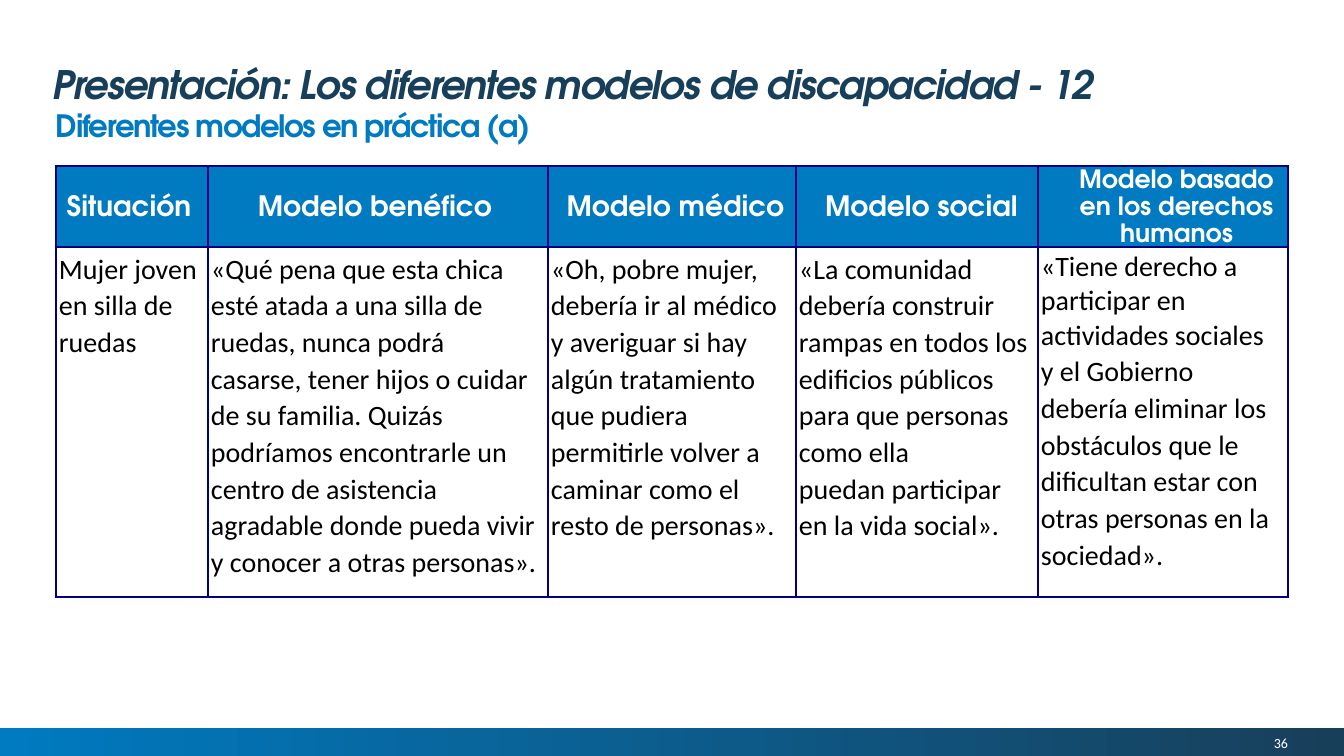
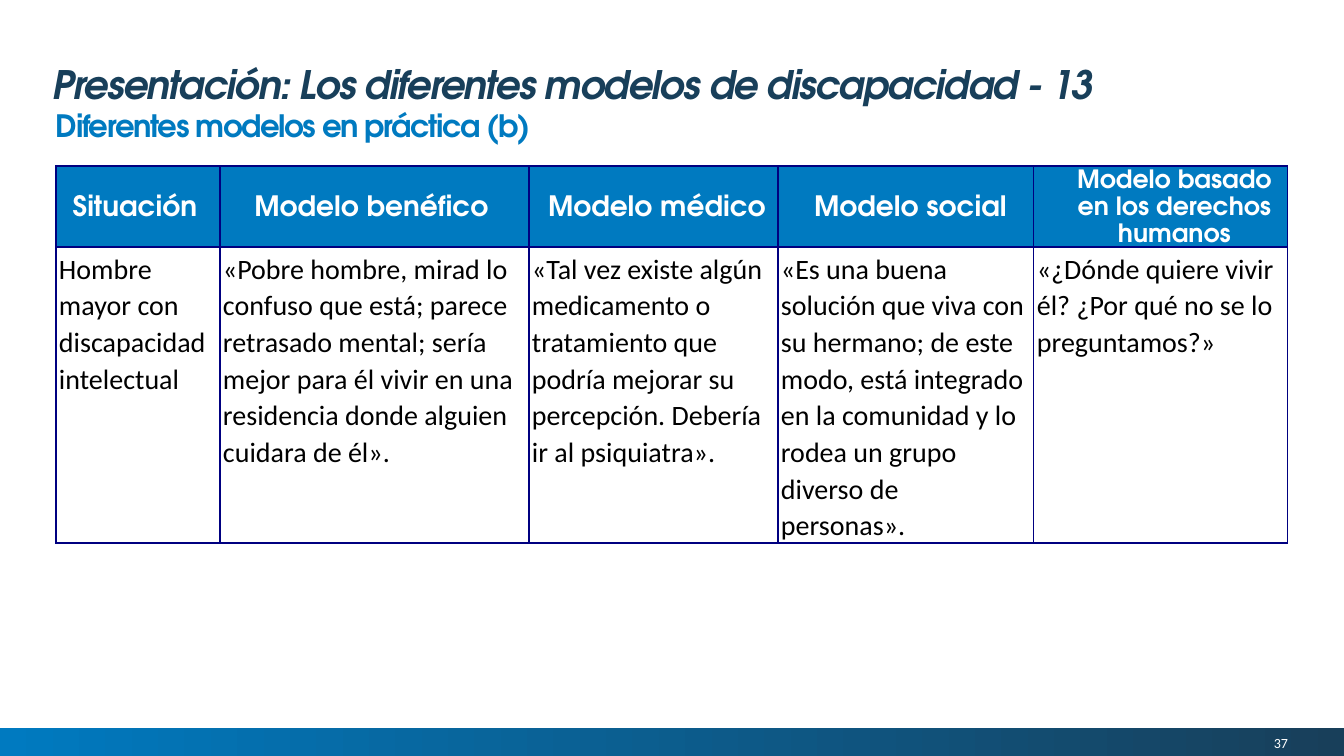
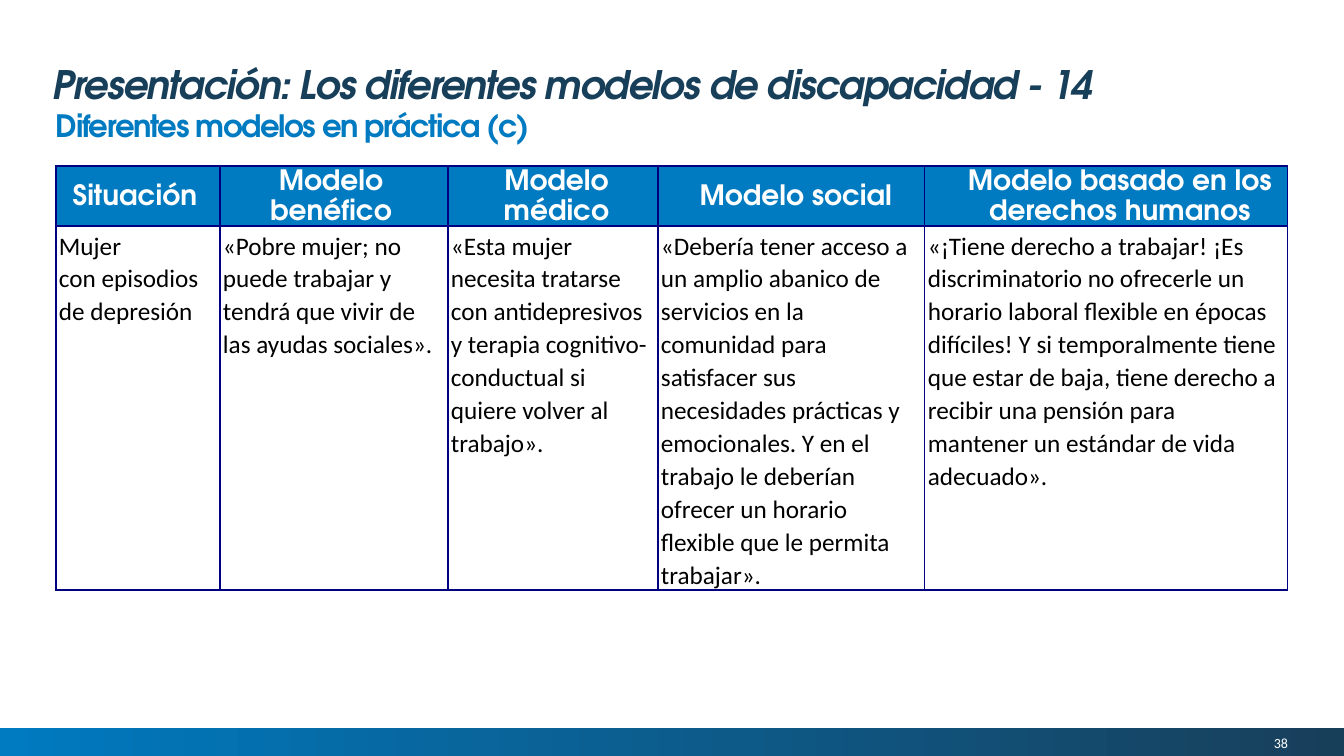
from lxml import etree
from pptx import Presentation
from pptx.dml.color import RGBColor
from pptx.enum.shapes import MSO_SHAPE
from pptx.enum.text import MSO_ANCHOR, PP_ALIGN
from pptx.oxml.ns import qn
from pptx.util import Pt

RECTANGLE = MSO_SHAPE.RECTANGLE
TOP, MIDDLE, BOTTOM = MSO_ANCHOR.TOP, MSO_ANCHOR.MIDDLE, MSO_ANCHOR.BOTTOM
LEFT, CENTER, RIGHT = PP_ALIGN.LEFT, PP_ALIGN.CENTER, PP_ALIGN.RIGHT

WIDTH, HEIGHT = 1344, 756
PX = 12192000 / WIDTH
BLUE, NAVY, BORDER = "007AC0", "183F5A", "000080"
WHITE, BLACK = "FFFFFF", "000000"
HEADING_FONT, BODY_FONT = "TeX Gyre Adventor", "Calibri"
TABLE_LEFT, TABLE_TOP, TABLE_WIDTH = 56, 166, 1232
LINE_FACTOR = 1.07

MODELS = [
    "Situación",
    "Modelo benéfico",
    "Modelo médico",
    "Modelo social",
    "Modelo basado en los derechos humanos",
]
HEADER_INDENTS = [0, 0, 13, 15, 33]

CASES = [
    {
        "columns": [152, 340, 248, 242, 250],
        "rows": [81, 350],
        "rights_size": 18,
        "body_size": 20,
        "answers": [
            "Mujer joven\nen silla de ruedas",
            "«Qué pena que esta chica esté atada a una silla de ruedas, nunca podrá casarse, "
            "tener hijos o cuidar de su familia. Quizás podríamos encontrarle un centro de "
            "asistencia agradable donde pueda vivir y conocer a otras personas».",
            "«Oh, pobre mujer, debería ir al médico y averiguar si hay algún tratamiento que "
            "pudiera permitirle volver a caminar como el resto de personas».",
            "«La comunidad debería construir rampas en todos los edificios públicos para que "
            "personas como ella\npuedan participar en la vida social».",
            "«Tiene derecho a participar en actividades sociales\ny el Gobierno debería "
            "eliminar los obstáculos que le dificultan estar con otras personas en la "
            "sociedad».",
        ],
    },
    {
        "columns": [164, 309, 249, 256, 254],
        "rows": [81, 296],
        "rights_size": 18,
        "body_size": 20,
        "answers": [
            "Hombre mayor con discapacidad intelectual",
            "«Pobre hombre, mirad lo confuso que está; parece retrasado mental; sería mejor "
            "para él vivir en una residencia donde alguien cuidara de él».",
            "«Tal vez existe algún medicamento o tratamiento que podría mejorar su "
            "percepción. Debería ir al psiquiatra».",
            "«Es una buena solución que viva con su hermano; de este modo, está integrado en "
            "la comunidad y lo rodea un grupo diverso de personas».",
            "«¿Dónde quiere vivir él? ¿Por qué no se lo preguntamos?»",
        ],
    },
    {
        "columns": [164, 228, 210, 267, 363],
        "rows": [60, 364],
        "rights_size": 20,
        "body_size": 18,
        "answers": [
            "Mujer\ncon episodios de depresión",
            "«Pobre mujer; no puede trabajar y tendrá que vivir de las ayudas sociales».",
            "«Esta mujer necesita tratarse con antidepresivos y terapia cognitivo-conductual "
            "si quiere volver al trabajo».",
            "«Debería tener acceso a un amplio abanico de servicios en la comunidad para "
            "satisfacer sus necesidades prácticas y emocionales. Y en el trabajo le deberían "
            "ofrecer un horario flexible que le permita trabajar».",
            "«¡Tiene derecho a trabajar! ¡Es discriminatorio no ofrecerle un horario laboral "
            "flexible en épocas difíciles! Y si temporalmente tiene que estar de baja, tiene "
            "derecho a recibir una pensión para mantener un estándar de vida adecuado».",
        ],
    },
]


def px(length):
    return round(length * PX)


def colour(value):
    return RGBColor.from_string(value)


prs = Presentation()
prs.slide_width, prs.slide_height = px(WIDTH), px(HEIGHT)
tables = []

for index, case in enumerate(CASES):
    slide = prs.slides.add_slide(prs.slide_layouts[6])

    band = slide.shapes.add_shape(RECTANGLE, 0, px(728), px(WIDTH), px(28))
    band.shadow.inherit = False
    band.line.fill.background()
    band.fill.gradient()
    band.fill.gradient_angle = 0
    for stop, shade in zip(band.fill.gradient_stops, (BLUE, NAVY)):
        stop.color.rgb = colour(shade)

    title = f"Presentación: Los diferentes modelos de discapacidad - {12 + index}"
    subtitle = f"Diferentes modelos en práctica ({'abc'[index]})"
    page = str(36 + index)
    for text, box, inset, anchor, align, face, size, shade, bold, italic in (
        (title, (43, 56, 1080, 47), (10, 5), TOP, LEFT, HEADING_FONT, 28, NAVY, True, True),
        (subtitle, (56, 105, 1232, 39), (0, 0), BOTTOM, LEFT, HEADING_FONT, 22, BLUE, True, False),
        (page, (1107, 731, 181, 24), (0, 0), MIDDLE, RIGHT, BODY_FONT, 10, WHITE, False, False),
    ):
        frame = slide.shapes.add_textbox(*map(px, box)).text_frame
        frame.word_wrap = True
        frame.vertical_anchor = anchor
        frame.margin_left = frame.margin_right = px(inset[0])
        frame.margin_top = frame.margin_bottom = px(inset[1])
        frame.text = text
        paragraph = frame.paragraphs[0]
        paragraph.alignment = align
        font = paragraph.font
        font.name, font.size, font.bold, font.italic = face, Pt(size), bold, italic
        font.color.rgb = colour(shade)
        if face == HEADING_FONT:
            paragraph.line_spacing = Pt(33)
            paragraph.runs[0].font._element.set("spc", "-100")

    table = slide.shapes.add_table(
        2, len(MODELS), px(TABLE_LEFT), px(TABLE_TOP), px(TABLE_WIDTH), px(sum(case["rows"]))
    ).table
    table.first_row = table.horz_banding = False
    tables.append(table)
    for column, width in zip(table.columns, case["columns"]):
        column.width = px(width)

    for r, texts in enumerate((MODELS, case["answers"])):
        table.rows[r].height = px(case["rows"][r])
        is_header = r == 0
        for c, text in enumerate(texts):
            cell = table.cell(r, c)
            cell.text = text
            cell.vertical_anchor = MIDDLE if is_header else TOP
            insets = (0, 0, 6, 0) if is_header else (3, 3, 8, 0)
            cell.margin_left, cell.margin_top, cell.margin_right, cell.margin_bottom = map(px, insets)

            properties = cell._tc.get_or_add_tcPr()
            for side in ("a:lnL", "a:lnR", "a:lnT", "a:lnB"):
                line = etree.SubElement(properties, qn(side), w=str(Pt(1)))
                solid = etree.SubElement(line, qn("a:solidFill"))
                etree.SubElement(solid, qn("a:srgbClr"), val=BORDER)
            cell.fill.solid()
            cell.fill.fore_color.rgb = colour(BLUE if is_header else WHITE)

            size = case["body_size"]
            if is_header:
                size = case["rights_size"] if c == len(MODELS) - 1 else 20
            for paragraph in cell.text_frame.paragraphs:
                paragraph.alignment = CENTER if is_header else LEFT
                paragraph.line_spacing = Pt(size * LINE_FACTOR) if is_header else LINE_FACTOR
                if is_header:
                    paragraph._p.get_or_add_pPr().set("marL", str(px(HEADER_INDENTS[c])))
                font = paragraph.font
                font.name = HEADING_FONT if is_header else BODY_FONT
                font.size, font.bold = Pt(size), is_header
                font.color.rgb = colour(WHITE if is_header else BLACK)

wheelchair_rights = tables[0].cell(1, len(MODELS) - 1)
wheelchair_rights.text_frame.paragraphs[0].line_spacing = 1.0

prs.save("out.pptx")
